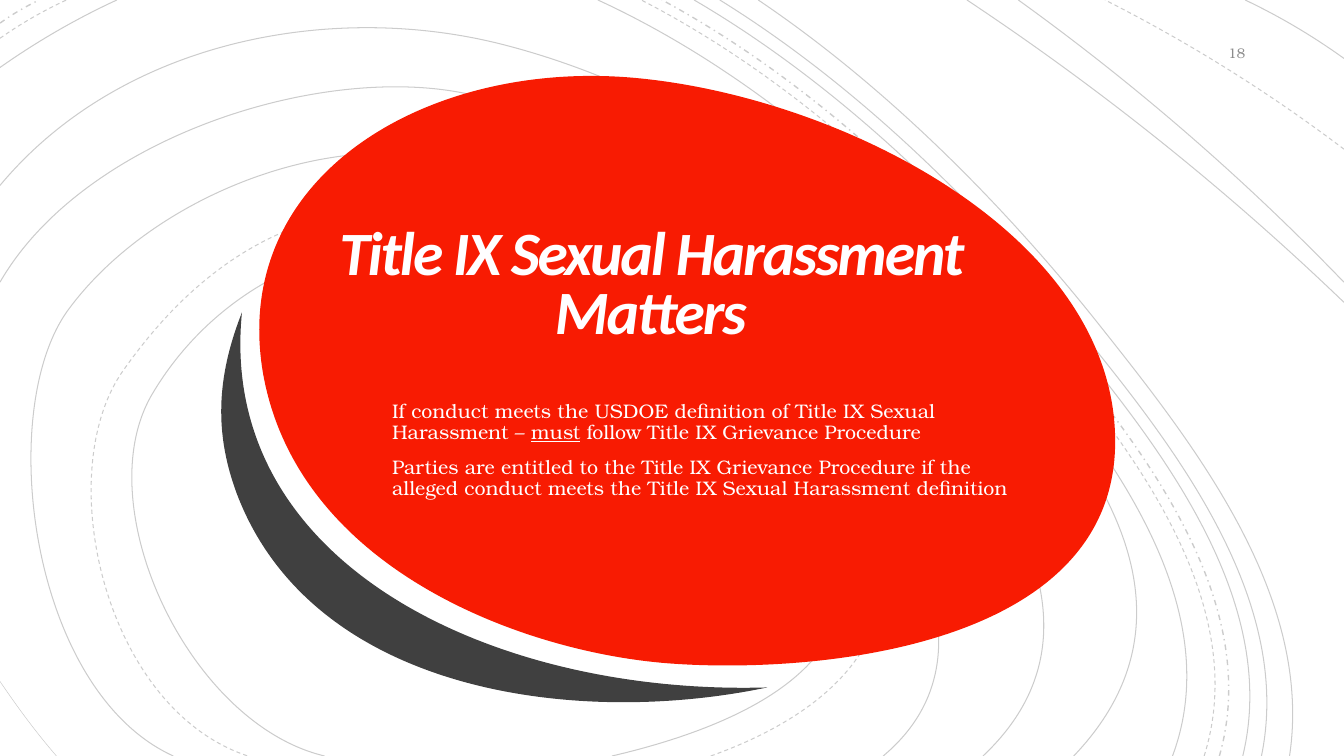
import math
from dataclasses import dataclass
from lxml import etree
from pptx import Presentation
from pptx import util as u
from pptx.dml.color import RGBColor
from pptx.enum import dml, text
from pptx.oxml.ns import qn


@dataclass(frozen=True)
class Theme:
    heading_font: str = "Calibri"
    body_font: str = "TeX Gyre Bonum"
    accent: str = "F81B02"
    crescent: str = "404040"
    contour: str = "000000"
    contour_opacity: int = 20000
    light: str = "FFFEFF"
    muted: str = "8C8C8C"
    title_size: int = 44
    body_size: int = 14
    number_size: int = 10


WIDTH, HEIGHT = 13.33, 7.5
SOLID, DASH, DASH_DOT = dml.MSO_LINE.SOLID, dml.MSO_LINE.DASH, dml.MSO_LINE.DASH_DOT

# Outlines: a start point, then curves. A curve of two points (second control, end)
# continues smoothly; a curve of three points also states its first control.
LOOPS = [
    (SOLID, [(8.76, 7.5), [(10.25, 6.25), (8.35, 4.09), (7.38, 3.15)],
             [(5.36, 1.64), (4.12, 1.53)], [(1.41, 2.08), (0.68, 3.07)],
             [(0.29, 6.85), (1.72, 7.5)]]),
    (SOLID, [(6.07, 7.5), [(7.1, 7.26), (8.8, 6.67), (8.25, 5.29)],
             [(6.15, 2.78), (4.8, 2.48)], [(2.16, 2.81), (1.51, 3.91)],
             [(1.87, 7.18), (3.22, 7.5)]]),
    (DASH, [(7.05, 7.5), [(9, 6.8), (9.15, 5.5), (8.17, 4.4)],
            [(5.92, 2.27), (4.43, 2.09)], [(1.93, 2.67), (1.22, 3.68)],
            [(1.03, 7.03), (2.46, 7.5)]]),
    (SOLID, [(9.75, 7.5), [(11.3, 6.04), (9.5, 4.13), (8.38, 3.06)],
             [(6.03, 1.2), (4.58, 0.92)], [(0.82, 1.38), (0, 2.8)]]),
    (SOLID, [(10.65, 7.5), [(12.13, 5.95), (10.67, 4.22), (9.44, 3.07)],
             [(6.67, 0.87), (4.98, 0.44)], [(1.2, 0.4), (0, 1.84)]]),
]
# Sweeps lie between an inner and an outer curve: dash, width, share of the way
INNER = [(11.63, 7.5), [(12.26, 5.81), (10.64, 4.01), (9.63, 2.87)], [(7.36, 0.66), (5.93, 0)]]
OUTER = [(12.79, 7.5), [(13.03, 5.9), (11.82, 4.38), (10.9, 3.22)], [(8.81, 0.87), (7.52, 0)]]
SWEEPS = [(SOLID, 0.75, 0), (DASH, 0.75, 0.27), (DASH_DOT, 1, 0.4),
          (SOLID, 0.75, 0.6), (SOLID, 0.75, 0.76), (SOLID, 0.75, 1)]
# Corner arcs: dash, width, side x, height on the side, x on the top edge
CORNERS = [(SOLID, 0.75, 0, 0.67, 1.16), (DASH, 0.75, 0, 0.38, 0.66),
           (DASH_DOT, 1, 0, 0.23, 0.39), (SOLID, 0.75, WIDTH, 3, 9.59),
           (SOLID, 0.75, WIDTH, 2.8, 10.1), (DASH, 0.75, WIDTH, 1.48, 10.96),
           (SOLID, 0.75, WIDTH, 0.58, 12.35)]
LOWER_LEFT = [(0, 6.76), [(0.19, 7.04), (0.37, 7.28), (0.56, 7.5)]]
CRESCENT = [(2.4, 3.1), [(2.15, 5.6), (4.9, 6.9), (7.61, 6.82)],
            [(5.7, 7.22), (3.1, 6.87), (2.35, 4.9)],
            [(2.13, 4.31), (2.14, 3.76), (2.4, 3.1)]]
BLOB = [(2.61, 3.71), [(2.27, 1.75), (4.23, 0.6), (6.26, 0.77)],
        [(11.06, 2.31), (11.06, 4.38)], [(8.03, 6.69), (6.62, 6.58)],
        [(2.96, 5.66), (2.61, 3.71)]]


def bezier_points(outline):
    """Flatten an outline, mirroring the last control where a curve runs on smoothly."""
    points = [outline[0]]
    for curve in outline[1:]:
        if len(curve) == 2:
            (cx, cy), (x, y) = points[-2:]
            points.append((2 * x - cx, 2 * y - cy))
        points.extend(curve)
    return points


def blend(inner, outer, share):
    if isinstance(inner, (list, tuple)):
        return type(inner)([blend(a, b, share) for a, b in zip(inner, outer)])
    return inner + (outer - inner) * share


def corner_arc(side, height, top, bow=0.03):
    """Bow the line from the side to the top edge slightly outwards."""
    dx, dy = top - side, -height
    turn = math.copysign(bow, dx)
    controls = [(side + dx * part + dy * turn, height + dy * part - dx * turn)
                for part in (1 / 3, 2 / 3)]
    return [(side, height), [*controls, (top, 0)]]


class SlideBuilder:
    def __init__(self, slide, theme):
        self.slide, self.theme = slide, theme

    def curve(self, outline, closed=False):
        start, *rest = [(u.Inches(x), u.Inches(y)) for x, y in bezier_points(outline)]
        builder = self.slide.shapes.build_freeform(*start)
        builder.add_line_segments(rest, close=closed)
        drawn = builder.convert_to_shape()
        drawn.shadow.inherit = False
        drawn.fill.background()
        drawn.line.fill.background()
        # Every three straight segments become one cubic curve
        segments = list(drawn._element.iter(qn("a:lnTo")))
        for first, second, third in zip(*[iter(segments)] * 3):
            first.tag = qn("a:cubicBezTo")
            for segment in (second, third):
                first.append(segment[0])
                segment.getparent().remove(segment)
        return drawn

    def contour(self, outline, dash=SOLID, width=0.75):
        line = self.curve(outline).line
        line.color.rgb = RGBColor.from_string(self.theme.contour)
        line.width, line.dash_style = u.Pt(width), dash
        color = next(line._ln.iter(qn("a:srgbClr")))
        etree.SubElement(color, qn("a:alpha"), val=str(self.theme.contour_opacity))

    def filled(self, outline, color):
        fill = self.curve(outline, closed=True).fill
        fill.solid()
        fill.fore_color.rgb = RGBColor.from_string(color)

    def run(self, paragraph, words, font, size, color, **styles):
        run = paragraph.add_run()
        run.text = words
        run.font.name, run.font.size = font, u.Pt(size)
        run.font.color.rgb = RGBColor.from_string(color)
        for style, value in styles.items():
            setattr(run.font, style, value)
        return run

    def frame(self, holder, insets, anchor):
        frame = holder.text_frame
        frame.word_wrap, frame.auto_size = True, text.MSO_AUTO_SIZE.NONE
        frame.vertical_anchor = anchor
        (frame.margin_left, frame.margin_top,
         frame.margin_right, frame.margin_bottom) = map(u.Inches, insets)
        return frame

    def title(self, words, box):
        title = self.slide.shapes.title
        title.left, title.top, title.width, title.height = map(u.Inches, box)
        self.slide.shapes._spTree.append(title._element)  # bring above the blob
        frame = self.frame(title, (0.25, 0.25, 0.25, 0), text.MSO_ANCHOR.BOTTOM)
        heading = frame.paragraphs[0]
        heading.alignment, heading.line_spacing = text.PP_ALIGN.CENTER, 0.8
        run = self.run(heading, words, self.theme.heading_font, self.theme.title_size,
                       self.theme.light, bold=True, italic=True)
        run.font._element.set("spc", "-150")

    def textbox(self, paragraphs, box, size, color, insets=(0.1, 0.05, 0.1, 0.05),
                anchor=text.MSO_ANCHOR.TOP, align=text.PP_ALIGN.LEFT, spacing=1.0, before=0):
        holder = self.slide.shapes.add_textbox(*map(u.Inches, box))
        frame = self.frame(holder, insets, anchor)
        for index, runs in enumerate(paragraphs):
            paragraph = frame.add_paragraph() if index else frame.paragraphs[0]
            paragraph.alignment, paragraph.line_spacing = align, spacing
            paragraph.space_before = u.Pt(before)
            for words, underline in runs:
                self.run(paragraph, words, self.theme.body_font, size, color, underline=underline)


def main():
    deck = Presentation()
    deck.slide_width, deck.slide_height = u.Inches(WIDTH), u.Inches(HEIGHT)
    theme = Theme()
    page = SlideBuilder(deck.slides.add_slide(deck.slide_layouts[5]), theme)

    # Background contours
    for dash, loop in LOOPS:
        page.contour(loop, dash)
    for dash, width, share in SWEEPS:
        page.contour(blend(INNER, OUTER, share), dash, width)
    for dash, width, *ends in CORNERS:
        page.contour(corner_arc(*ends), dash, width)
    page.contour(LOWER_LEFT, width=0.38)

    # Slide number
    page.textbox([[("18", False)]], (11.45, 0.35, 1, 0.35), theme.number_size, theme.muted,
                 anchor=text.MSO_ANCHOR.MIDDLE, align=text.PP_ALIGN.RIGHT)

    # Crescent and blob
    page.filled(CRESCENT, theme.crescent)
    page.filled(BLOB, theme.accent)

    # Title and body
    page.title("Title IX Sexual Harassment Matters", (2.65, 1.62, 7.61, 1.82))
    page.textbox([
        [("If conduct meets the USDOE definition of Title IX Sexual Harassment – ", False),
         ("must", True), (" follow Title IX Grievance Procedure", False)],
        [("Parties are entitled to the Title IX Grievance Procedure if the alleged conduct "
          "meets the Title IX Sexual Harassment definition", False)],
    ], (3.79, 3.98, 6.6, 1.31), theme.body_size, theme.light,
        insets=(0.1, 0, 0.1, 0.05), spacing=0.9, before=10)

    deck.save("out.pptx")


if __name__ == "__main__":
    main()
